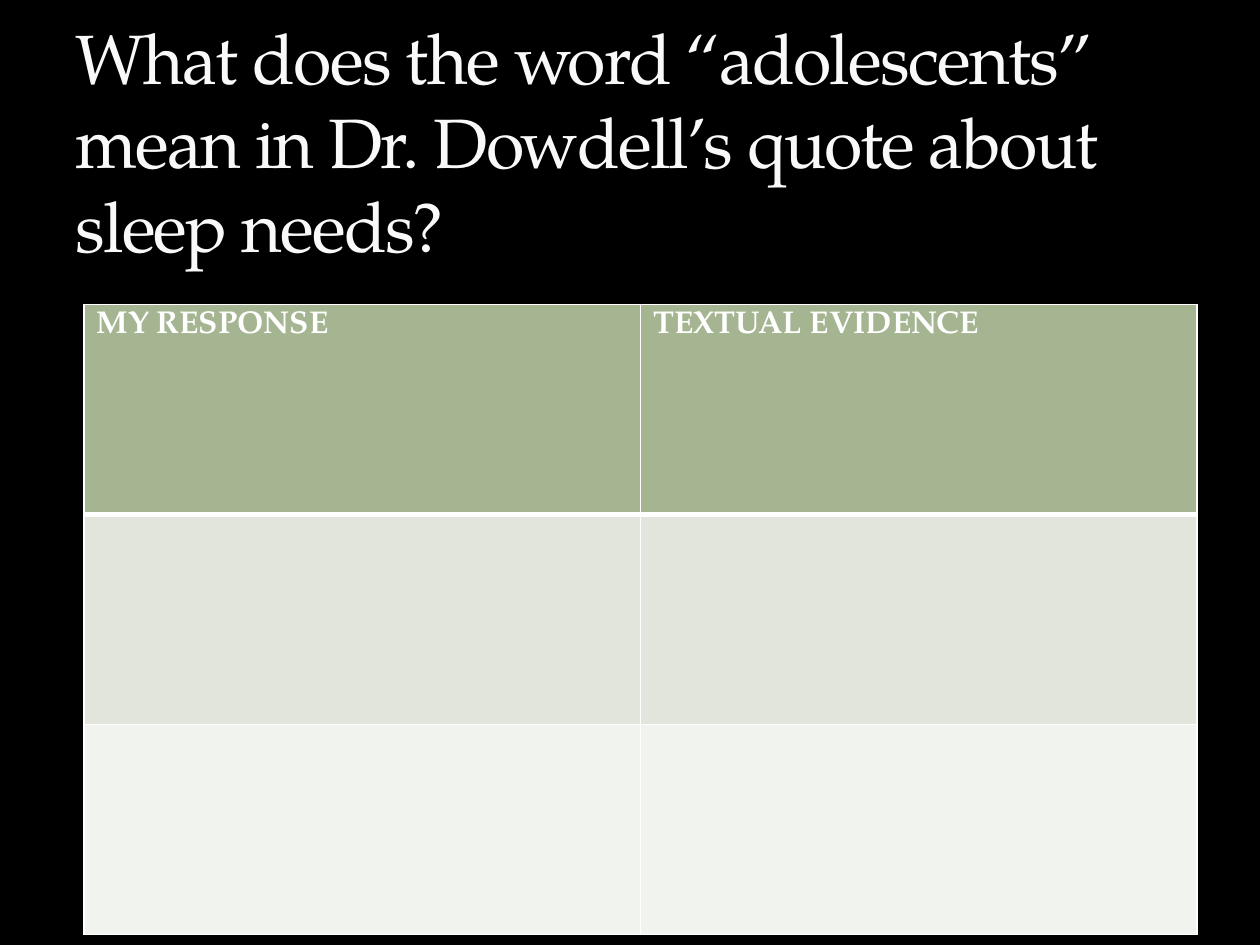
from lxml import etree
from pptx import Presentation
from pptx.dml.color import RGBColor
from pptx.enum.text import MSO_ANCHOR, MSO_AUTO_SIZE, PP_ALIGN
from pptx.oxml.ns import qn
from pptx.util import Pt

TITLE = "What does the word “adolescents” mean in Dr. Dowdell’s quote about sleep needs?"
ROWS = [
    ("A5B592", ["MY RESPONSE", "TEXTUAL EVIDENCE"]),
    ("E1E5DC", ["", ""]),
    ("F0F3EE", ["", ""]),
]
FONT = "TeX Gyre Pagella"
TABLE_LEFT, TABLE_TOP, TABLE_WIDTH, TABLE_HEIGHT = 48, 174, 636, 360
TITLE_BOX = (36, 60, 666, 96)
RULE, HEADER_RULE = 1, 3


def rgb(value):
    return RGBColor.from_string(value)


def set_text(tf, text, size, color, bold=False, spacing=0):
    p = tf.paragraphs[0]
    p.alignment = PP_ALIGN.LEFT
    r = p.add_run()
    r.text = text
    r.font.name, r.font.size, r.font.bold = FONT, Pt(size), bold
    r.font.color.rgb = rgb(color)
    if spacing:
        r.font._element.set("spc", str(spacing * 100))


def set_borders(cell, color, **widths):
    """Draw solid cell borders; must run before the cell's fill is set."""
    tcPr = cell._tc.get_or_add_tcPr()
    for side, width in widths.items():
        ln = etree.SubElement(tcPr, qn(f"a:ln{side}"), w=str(Pt(width)))
        fill = etree.SubElement(ln, qn("a:solidFill"))
        etree.SubElement(fill, qn("a:srgbClr"), val=color)


prs = Presentation()
prs.slide_width, prs.slide_height = Pt(720), Pt(540)
s = prs.slides.add_slide(prs.slide_layouts[5])
s.background.fill.solid()
s.background.fill.fore_color.rgb = rgb("000000")

title = s.shapes.title
title.left, title.top, title.width, title.height = map(Pt, TITLE_BOX)
tf = title.text_frame
tf.word_wrap = True
tf.auto_size = MSO_AUTO_SIZE.NONE
tf.vertical_anchor = MSO_ANCHOR.BOTTOM
set_text(tf, TITLE, 40, "F9F9F9", spacing=-1)

table = s.shapes.add_table(
    len(ROWS), 2, Pt(TABLE_LEFT), Pt(TABLE_TOP), Pt(TABLE_WIDTH), Pt(TABLE_HEIGHT)
).table
for i, (fill, texts) in enumerate(ROWS):
    table.rows[i].height = Pt(TABLE_HEIGHT / len(ROWS))
    for j, text in enumerate(texts):
        cell = table.cell(i, j)
        set_borders(cell, "FFFFFF", L=RULE, R=RULE,
                    T=HEADER_RULE if i == 1 else RULE,
                    B=HEADER_RULE if i == 0 else RULE)
        cell.fill.solid()
        cell.fill.fore_color.rgb = rgb(fill)
        if text:
            set_text(cell.text_frame, text, 18, "FFFFFF", bold=True)

prs.save("out.pptx")
